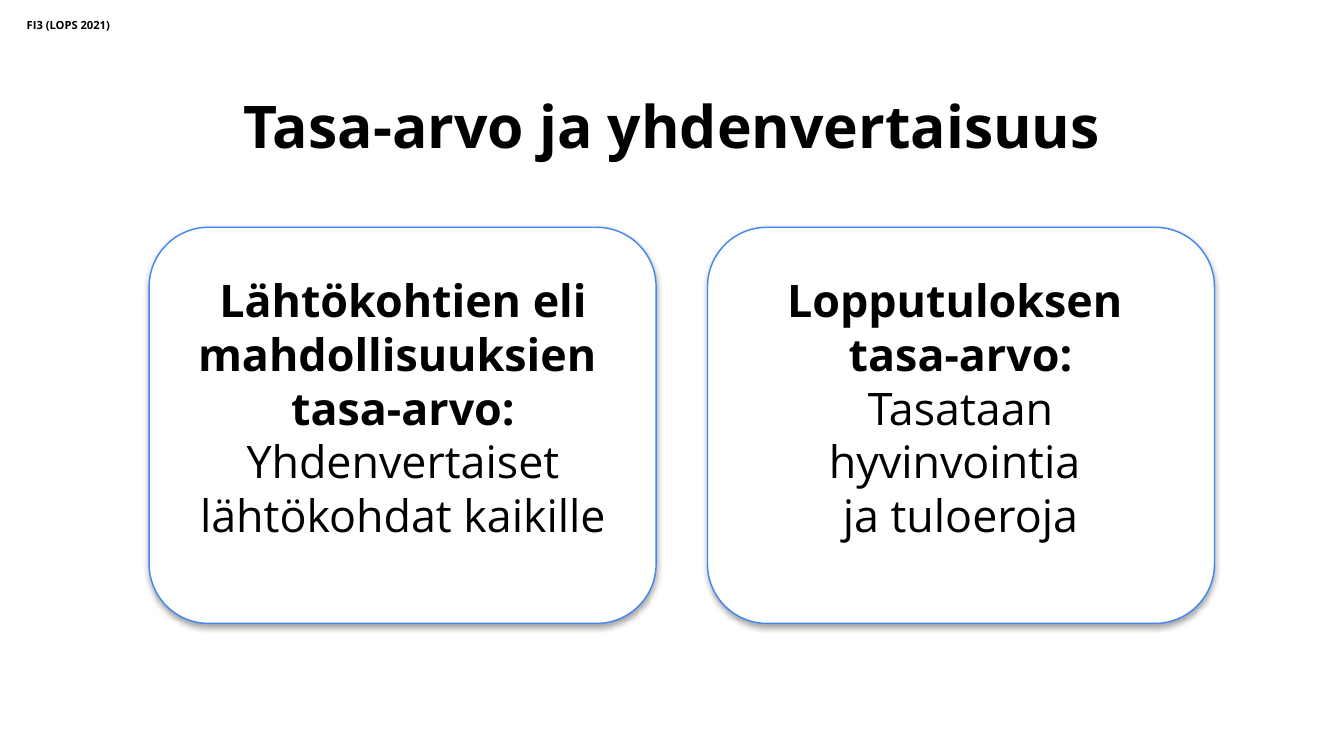
from lxml import etree
from pptx import Presentation
from pptx.dml.color import RGBColor
from pptx.enum.shapes import MSO_SHAPE
from pptx.enum.text import MSO_ANCHOR, MSO_AUTO_SIZE, PP_ALIGN
from pptx.oxml import parse_xml
from pptx.oxml.ns import nsdecls
from pptx.util import Inches, Pt

ROUNDED = MSO_SHAPE.ROUNDED_RECTANGLE
CENTER, LEFT = PP_ALIGN.CENTER, PP_ALIGN.LEFT
TOP, MIDDLE = MSO_ANCHOR.TOP, MSO_ANCHOR.MIDDLE
GROW = MSO_AUTO_SIZE.SHAPE_TO_FIT_TEXT

FONT = "Open Sans"
COLORS = {"text": "000000", "card": "FFFFFF", "border": "4285F4", "shadow": "000000"}

CARD_TOP, CARD_WIDTH, CARD_HEIGHT = 4.51, 10.06, 7.86
CARD_LEFT, CARD_STEP = 2.96, 11.08
# Heading, body, text offset from the card's left edge, text width
CARDS = [
    ("Lähtökohtien eli mahdollisuuksien \ntasa-arvo:",
     "Yhdenvertaiset lähtökohdat kaikille", 0.36, 9.35),
    ("Lopputuloksen \ntasa-arvo:",
     "Tasataan hyvinvointia \nja tuloeroja", 0.74, 8.56),
]


def color(name):
    return RGBColor.from_string(COLORS[name])


def set_frame(frame, inset, anchor=TOP, wrap=True):
    frame.margin_left = frame.margin_right = Inches(inset)
    frame.margin_top = frame.margin_bottom = Inches(inset)
    frame.vertical_anchor = anchor
    frame.word_wrap = wrap
    frame.auto_size = GROW


def write(paragraph, text, size, bold=True, align=CENTER):
    paragraph.text = text
    paragraph.alignment = align
    for run in paragraph.runs:
        run.font.name = FONT
        run.font.size = Pt(size)
        run.font.bold = bold
        run.font.color.rgb = color("text")


def add_shadow(shape):
    shape.shadow.inherit = False
    effects = shape._element.spPr.find("{*}effectLst")
    effects.append(parse_xml(
        f'<a:outerShdw {nsdecls("a")} blurRad="{Pt(8)}" dist="{Pt(4)}" '
        f'dir="5400000" rotWithShape="0"><a:srgbClr val="{COLORS["shadow"]}">'
        '<a:alpha val="35000"/></a:srgbClr></a:outerShdw>'))


def add_course_label(slide, left, top, width, height):
    label = slide.shapes.add_textbox(Inches(left), Inches(top), Inches(width), Inches(height))
    set_frame(label.text_frame, 0.06, MIDDLE, wrap=False)
    write(label.text_frame.paragraphs[0], "FI3 (LOPS 2021)", 16, align=LEFT)


def add_title(slide, left, top, width, height):
    title = slide.shapes.title
    title.left, title.top = Inches(left), Inches(top)
    title.width, title.height = Inches(width), Inches(height)
    set_frame(title.text_frame, 0.13)
    write(title.text_frame.paragraphs[0], "Tasa-arvo ja yhdenvertaisuus", 84)


def add_card(slide, left, top, width, height, heading, body, text_offset, text_width):
    card = slide.shapes.add_shape(
        ROUNDED, Inches(left), Inches(top), Inches(width), Inches(height))
    card.adjustments[0] = 0.15
    card.fill.solid()
    card.fill.fore_color.rgb = color("card")
    card.line.color.rgb = color("border")
    card.line.width = Pt(2)
    add_shadow(card)

    content = slide.shapes.add_textbox(
        Inches(left + text_offset), Inches(top + 0.77), Inches(text_width), Inches(6.31))
    set_frame(content.text_frame, 0.13)
    write(content.text_frame.paragraphs[0], heading, 64)
    write(content.text_frame.add_paragraph(), body, 64, bold=False)


def main():
    deck = Presentation()
    deck.slide_width, deck.slide_height = Inches(26.67), Inches(15)
    slide = deck.slides.add_slide(deck.slide_layouts[5])

    add_course_label(slide, 0.47, 0.28, 1.78, 0.42)
    add_title(slide, 4.21, 1.64, 18.25, 1.86)
    for index, card in enumerate(CARDS):
        add_card(slide, CARD_LEFT + index * CARD_STEP, CARD_TOP,
                 CARD_WIDTH, CARD_HEIGHT, *card)

    deck.save("out.pptx")


if __name__ == "__main__":
    main()
